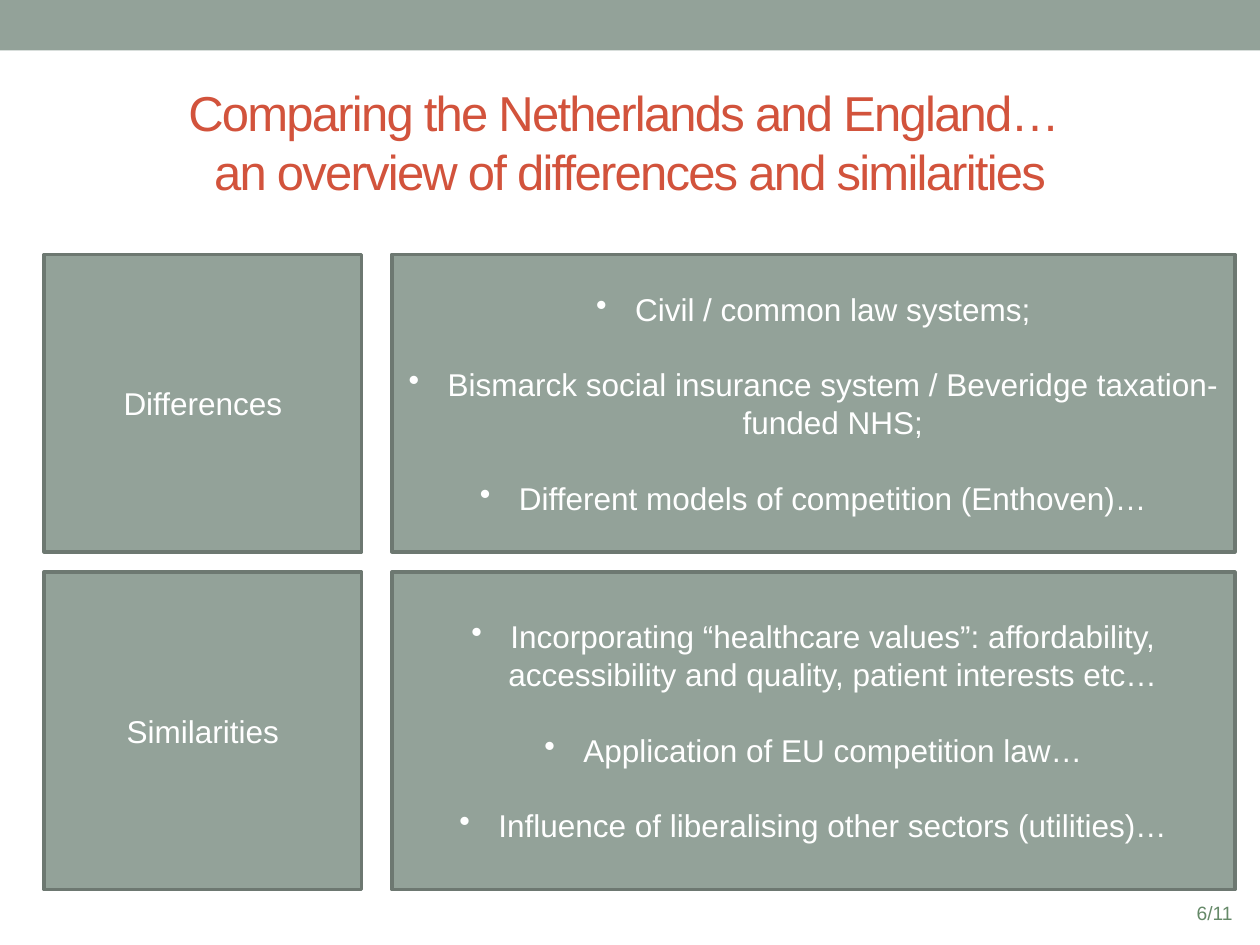
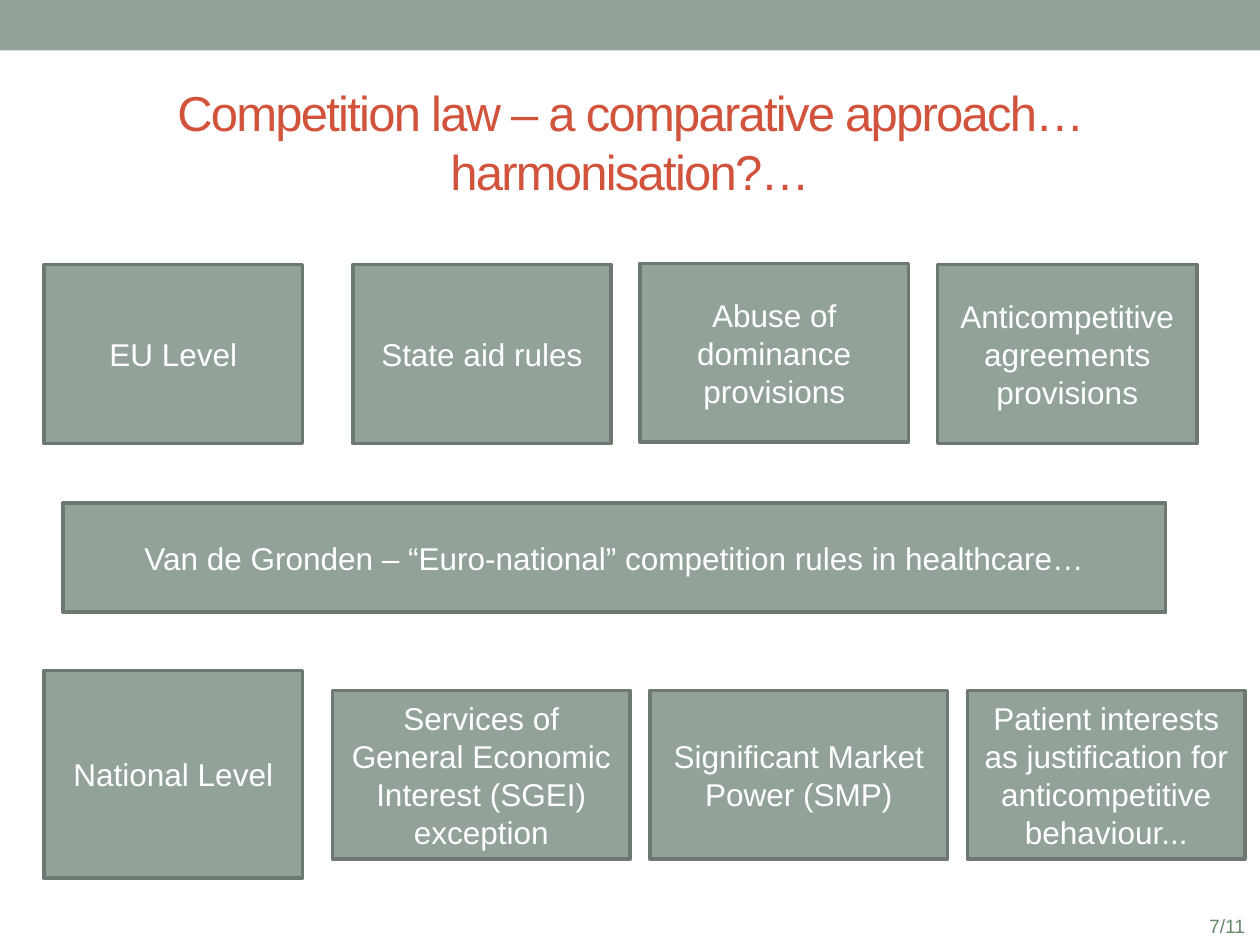
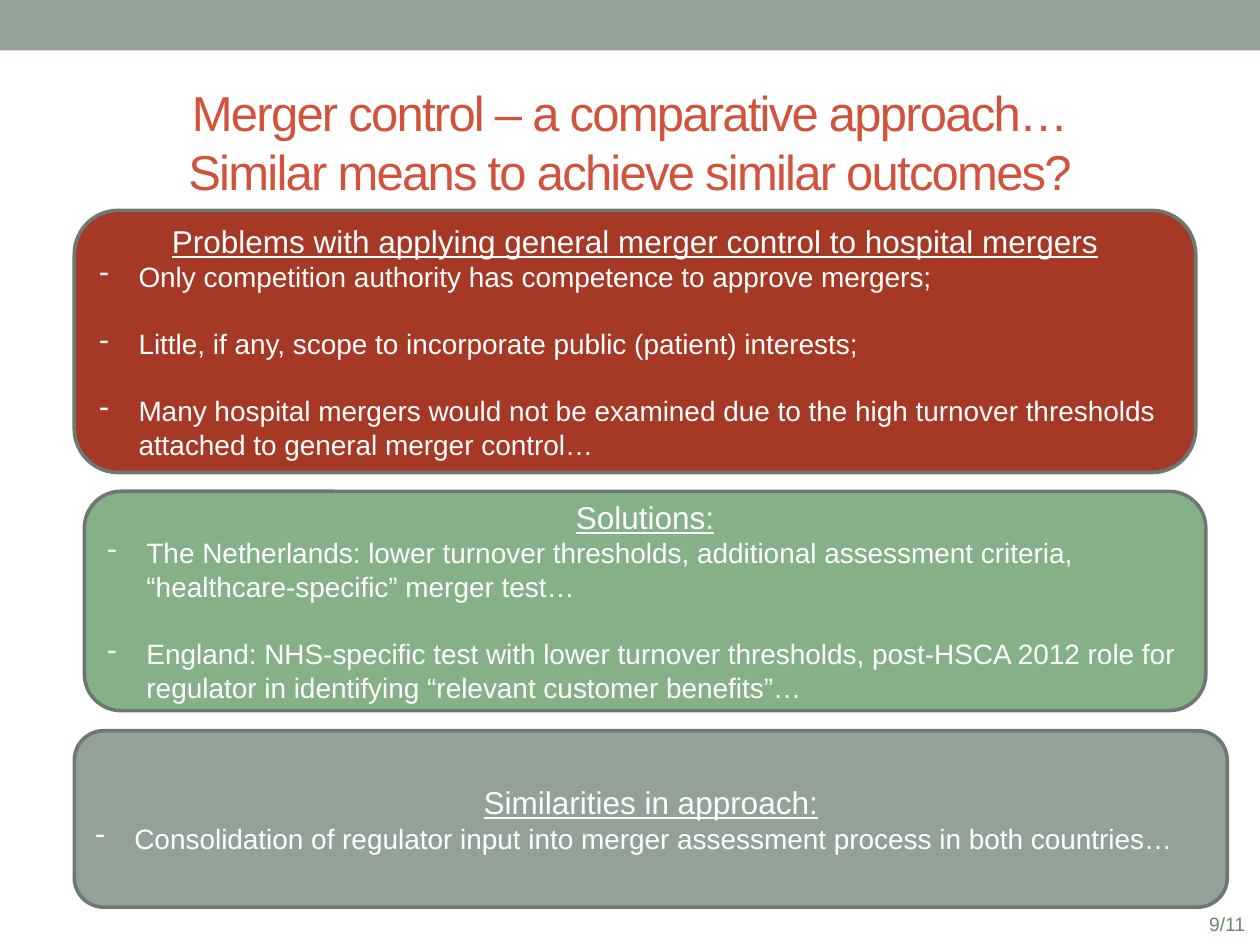
from lxml import etree
from pptx import Presentation
from pptx.dml.color import RGBColor
from pptx.enum.shapes import MSO_SHAPE
from pptx.enum.text import MSO_ANCHOR, MSO_AUTO_SIZE, PP_ALIGN
from pptx.oxml.ns import qn
from pptx.util import Inches, Pt

RECT, ROUNDED = MSO_SHAPE.RECTANGLE, MSO_SHAPE.ROUNDED_RECTANGLE
CENTER, LEFT = PP_ALIGN.CENTER, PP_ALIGN.LEFT
MIDDLE = MSO_ANCHOR.MIDDLE

FONT = "Arial"
COLORS = {"sage": "93A299", "outline": "6D7871", "title": "D2533C", "page": "658968",
          "red": "A53926", "green": "86B088", "white": "FFFFFF"}
TITLE_AREA = (0.5, 0.58, 9, 1.08)
BULLET_INDENT = 0.31
LINE_HEIGHT = 1.2

COMPARISON_TITLE = ["Comparing the Netherlands and England… ",
                    "an overview of differences and similarities"]
# (top, height, label, points)
COMPARISON_ROWS = [
    (2.02, 2.36, "Differences", [
        "Civil / common law systems;",
        "Bismarck social insurance system / Beveridge taxation-funded NHS;",
        "Different models of competition (Enthoven)…"]),
    (4.54, 2.52, "Similarities", [
        "Incorporating “healthcare values”: affordability, accessibility and quality, "
        "patient interests etc…",
        "Application of EU competition law…",
        "Influence of liberalising other sectors (utilities)…"]),
]

COMPETITION_TITLE = ["Competition law – a comparative approach… harmonisation?…"]
# (left, top, width, height), text
COMPETITION_BOXES = [
    ((0.35, 2.1, 2.05, 1.42), "EU Level"),
    ((2.8, 2.1, 2.05, 1.42), "State aid rules"),
    ((5.08, 2.09, 2.13, 1.42), "Abuse of dominance provisions"),
    ((7.44, 2.1, 2.06, 1.42), "Anticompetitive agreements provisions"),
    ((0.5, 3.99, 8.75, 0.87),
     "Van de Gronden – “Euro-national” competition rules in healthcare…"),
    ((0.35, 5.32, 2.05, 1.65), "National Level"),
    ((2.64, 5.48, 2.36, 1.34), "Services of General Economic Interest (SGEI) exception"),
    ((5.16, 5.48, 2.36, 1.34), "Significant Market Power (SMP)"),
    ((7.68, 5.48, 2.2, 1.34),
     "Patient interests as justification for anticompetitive behaviour..."),
]

MERGER_TITLE = ["Merger control – a comparative approach…",
                "Similar means to achieve similar outcomes?"]
# (left, top, width, height), fill, heading, points
MERGER_PANELS = [
    ((0.59, 1.67, 8.9, 2.08), "red",
     "Problems with applying general merger control to hospital mergers", [
         "Only competition authority has competence to approve mergers;",
         "Little, if any, scope to incorporate public (patient) interests;",
         "Many hospital mergers would not be examined due to the high turnover thresholds "
         "attached to general merger control…"]),
    ((0.67, 3.9, 8.9, 1.74), "green", "Solutions:", [
        "The Netherlands: lower turnover thresholds, additional assessment criteria, "
        "“healthcare-specific” merger test…",
        "England: NHS-specific test with lower turnover thresholds, post-HSCA 2012 role for "
        "regulator in identifying “relevant customer benefits”…"]),
    ((0.59, 5.8, 9.15, 1.4), "sage", "Similarities in approach:", [
        "Consolidation of regulator input into merger assessment process in both countries…"]),
]


def rgb(color):
    return RGBColor.from_string(COLORS[color])


def inches(area):
    return [Inches(length) for length in area]


def style(paragraph, size, color="white", align=CENTER):
    paragraph.alignment = align
    paragraph.font.name = FONT
    paragraph.font.size = Pt(size)
    paragraph.font.color.rgb = rgb(color)


def next_paragraph(frame):
    """Return the first paragraph while it is empty, then a new one each time."""
    first = frame.paragraphs[0]
    return frame.add_paragraph() if first.runs else first


def add_points(frame, points, mark, size, align):
    """Add bulleted paragraphs with one line of space between them."""
    for index, point in enumerate(points):
        paragraph = next_paragraph(frame)
        paragraph.text = point
        properties = paragraph._p.get_or_add_pPr()
        properties.set("marL", str(Inches(BULLET_INDENT)))
        properties.set("indent", str(-Inches(BULLET_INDENT)))
        etree.SubElement(properties, qn("a:buChar")).set("char", mark)
        style(paragraph, size, align=align)
        if index:
            paragraph.space_before = Pt(round(size * LINE_HEIGHT, 1))


def add_box(slide, area, fill="sage", kind=RECT):
    """Draw an outlined box and return its text frame."""
    box = slide.shapes.add_shape(kind, *inches(area))
    box.shadow.inherit = False
    box.fill.solid()
    box.fill.fore_color.rgb = rgb(fill)
    box.line.color.rgb = rgb("outline")
    box.line.width = Pt(2.08)
    box.text_frame.word_wrap = True
    box.text_frame.vertical_anchor = MIDDLE
    return box.text_frame


def add_label(slide, area, text):
    paragraph = add_box(slide, area).paragraphs[0]
    paragraph.text = text
    style(paragraph, 18)


def add_slide(deck, layout, title_lines, page, page_left, page_top):
    slide = deck.slides.add_slide(layout)
    frame = slide.shapes.title.text_frame
    frame.auto_size = MSO_AUTO_SIZE.NONE
    frame.vertical_anchor = MIDDLE
    heading = frame.paragraphs[0]
    style(heading, 28, "title")
    for index, line in enumerate(title_lines):
        if index:
            heading.add_line_break()
        run = heading.add_run()
        run.text = line
        run._r.get_or_add_rPr().set("spc", "-100")

    page_frame = slide.shapes.add_textbox(*inches((page_left, page_top, 0.5, 0.29))).text_frame
    page_frame.word_wrap = False
    page_frame.text = page
    style(page_frame.paragraphs[0], 11, "page")
    return slide


def add_layout_band(slide, layout, width):
    """Draw the top band and move it to the layout, behind everything."""
    band = slide.shapes.add_shape(RECT, 0, 0, width, Inches(0.4))
    band.shadow.inherit = False
    band.fill.solid()
    band.fill.fore_color.rgb = rgb("sage")
    band.line.fill.background()
    layout.shapes.element.insert(2, band.element)


def main():
    deck = Presentation()
    deck.slide_width, deck.slide_height = Inches(10), Inches(7.5)
    layout = deck.slide_layouts.get_by_name("Title Only")
    title = layout.placeholders[0]
    title.left, title.top, title.width, title.height = inches(TITLE_AREA)

    comparison = add_slide(deck, layout, COMPARISON_TITLE, "6/11", 9.39, 7.1)
    add_layout_band(comparison, layout, deck.slide_width)
    for top, height, label, points in COMPARISON_ROWS:
        add_label(comparison, (0.35, top, 2.52, height), label)
        frame = add_box(comparison, (3.11, top, 6.69, height))
        add_points(frame, points, "•", 18, CENTER)

    competition = add_slide(deck, layout, COMPETITION_TITLE, "7/11", 9.49, 7.21)
    for area, text in COMPETITION_BOXES:
        add_label(competition, area, text)

    merger = add_slide(deck, layout, MERGER_TITLE, "9/11", 9.49, 7.19)
    for area, fill, heading, points in MERGER_PANELS:
        frame = add_box(merger, area, fill, ROUNDED)
        paragraph = frame.paragraphs[0]
        paragraph.text = heading
        style(paragraph, 18)
        paragraph.font.underline = True
        add_points(frame, points, "-", 16, LEFT)

    deck.save("out.pptx")


if __name__ == "__main__":
    main()
